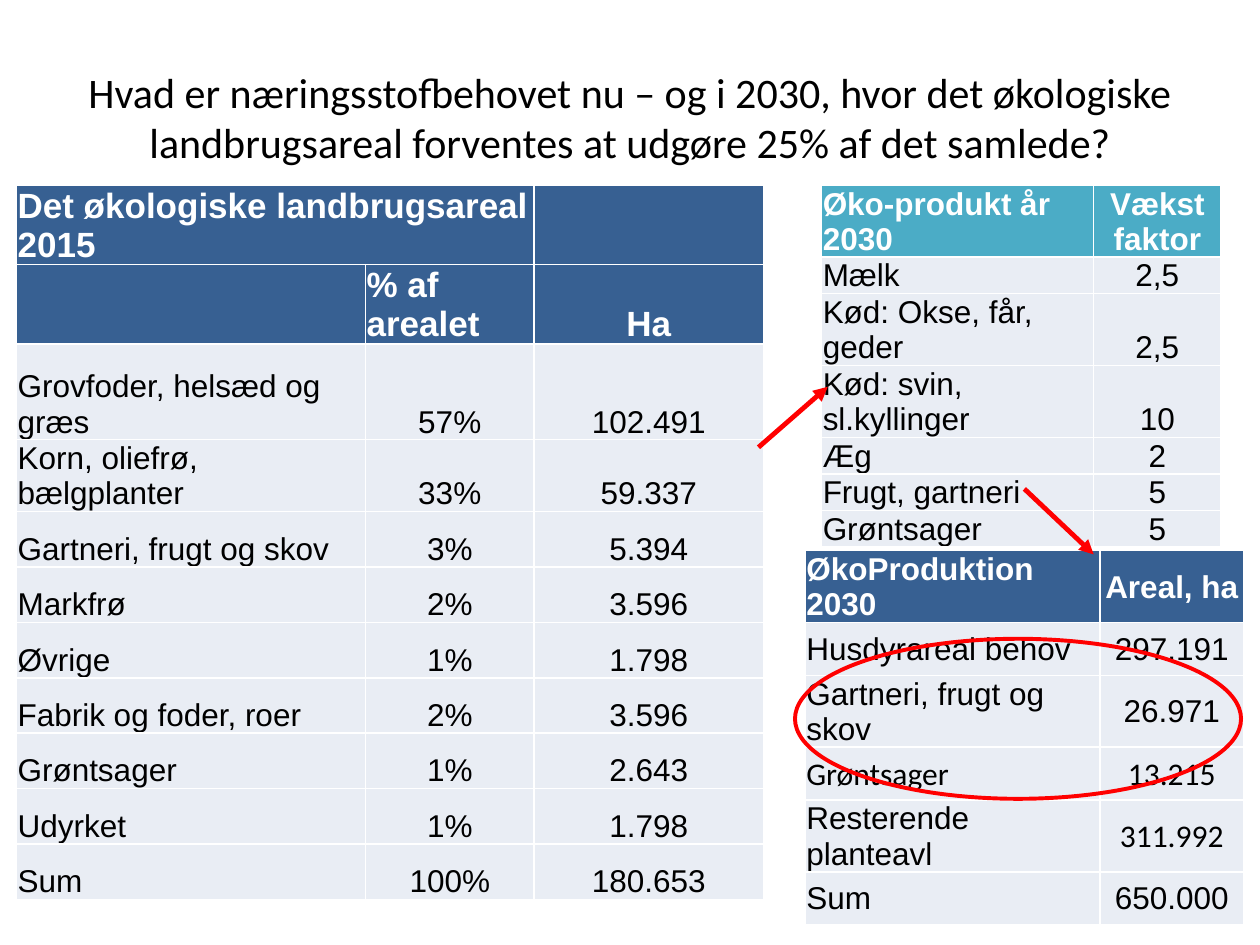
from lxml import etree
from pptx import Presentation
from pptx.dml.color import RGBColor
from pptx.enum import shapes, text
from pptx.oxml import ns
from pptx.util import Inches, Pt

WHITE = RGBColor(0xFF, 0xFF, 0xFF)
BLACK = RGBColor(0, 0, 0)
RED = RGBColor(0xFF, 0, 0)
NAVY = RGBColor(0x37, 0x60, 0x92)
TEAL = RGBColor(0x4B, 0xAC, 0xC6)
PALE = RGBColor(0xE9, 0xED, 0xF4)
LEFT, CENTER = text.PP_ALIGN.LEFT, text.PP_ALIGN.CENTER
BOTTOM, MIDDLE = text.MSO_ANCHOR.BOTTOM, text.MSO_ANCHOR.MIDDLE


def write(frame, wording, size=18, font="Arial", color=BLACK, bold=False, align=LEFT):
    paragraph = frame.paragraphs[0]
    paragraph.alignment = align
    run = paragraph.add_run()
    run.text = wording
    run.font.size = Pt(size)
    run.font.name = font
    run.font.bold = bold
    run.font.color.rgb = color


def add_borders(cell):
    properties = cell._tc.get_or_add_tcPr()
    for side in ("a:lnL", "a:lnR", "a:lnT", "a:lnB"):
        border = etree.SubElement(properties, ns.qn(side), w=str(Pt(1)))
        fill = etree.SubElement(border, ns.qn("a:solidFill"))
        etree.SubElement(fill, ns.qn("a:srgbClr"), val=str(WHITE))


area_2015 = [
    ("Det økologiske landbrugsareal 2015", "", ""),
    ("", "% af arealet", "Ha"),
    ("Grovfoder, helsæd og græs", "57%", "102.491"),
    ("Korn, oliefrø, bælgplanter", "33%", "59.337"),
    ("Gartneri, frugt og skov", "3%", "5.394"),
    ("Markfrø", "2%", "3.596"),
    ("Øvrige", "1%", "1.798"),
    ("Fabrik og foder, roer", "2%", "3.596"),
    ("Grøntsager", "1%", "2.643"),
    ("Udyrket", "1%", "1.798"),
    ("Sum", "100%", "180.653"),
]
growth_2030 = [
    ("Øko-produkt år 2030", "Vækst faktor"),
    ("Mælk", "2,5"),
    ("Kød: Okse, får, geder", "2,5"),
    ("Kød: svin, sl.kyllinger", "10"),
    ("Æg", "2"),
    ("Frugt, gartneri", "5"),
    ("Grøntsager", "5"),
]
production_2030 = [
    ("ØkoProduktion 2030", "Areal, ha"),
    ("Husdyrareal behov", "297.191"),
    ("Gartneri, frugt og skov", "26.971"),
    ("Grøntsager", "13.215"),
    ("Resterende planteavl", "311.992"),
    ("Sum", "650.000"),
]
production_calibri = {"Grøntsager", "13.215", "311.992"}

deck = Presentation()
deck.slide_width, deck.slide_height = Inches(10), Inches(7.5)
slide = deck.slides.add_slide(deck.slide_layouts[5])

title = slide.shapes.title
title.left, title.top = Inches(0.5), Inches(0.3)
title.width, title.height = Inches(9), Inches(1.25)
title.text_frame.vertical_anchor = MIDDLE
write(title.text_frame,
      "Hvad er næringsstofbehovet nu – og i 2030, hvor det økologiske "
      "landbrugsareal forventes at udgøre 25% af det samlede?",
      size=24, font="Calibri", align=CENTER)

tables = [
    (area_2015, 0.13, 1.47, (2.77, 1.34, 1.82), 0.44, NAVY, 2, 20, BOTTOM, ()),
    (growth_2030, 6.52, 1.47, (2.16, 1.01), 0.27, TEAL, 1, 18, BOTTOM, ()),
    (production_2030, 6.39, 4.37, (2.34, 1.14), 0.42, NAVY, 1, 18, MIDDLE, production_calibri),
]
for (rows, left, top, widths, row_height, header_fill, header_rows,
     header_size, anchor, calibri_words) in tables:
    table = slide.shapes.add_table(
        len(rows), len(widths), Inches(left), Inches(top),
        Inches(sum(widths)), Inches(row_height * len(rows))).table
    table.first_row = table.horz_banding = False
    for column, width in zip(table.columns, widths):
        column.width = Inches(width)
    for row_index, row in enumerate(rows):
        table.rows[row_index].height = Inches(row_height)
        is_header = row_index < header_rows
        for column_index, wording in enumerate(row):
            cell = table.cell(row_index, column_index)
            cell.margin_left = cell.margin_right = cell.margin_top = Inches(0.01)
            cell.margin_bottom = 0
            cell.vertical_anchor = anchor
            add_borders(cell)
            cell.fill.solid()
            cell.fill.fore_color.rgb = header_fill if is_header else PALE
            if wording:
                centered = column_index > 0 and wording != "% af arealet"
                write(cell.text_frame, wording,
                      size=header_size if is_header else 18,
                      font="Calibri" if wording in calibri_words else "Arial",
                      color=WHITE if is_header else BLACK,
                      bold=is_header, align=CENTER if centered else LEFT)
    if rows is area_2015:
        table.cell(0, 0).merge(table.cell(0, 1))
        table.rows[2].height = Inches(0.76)

for start_x, start_y, end_x, end_y in [(6.02, 3.55, 6.57, 3.07), (8.13, 3.88, 8.68, 4.4)]:
    arrow = slide.shapes.add_connector(
        shapes.MSO_CONNECTOR.STRAIGHT,
        Inches(start_x), Inches(start_y), Inches(end_x), Inches(end_y))
    arrow.line.color.rgb = RED
    arrow.line.width = Pt(2.75)
    etree.SubElement(arrow.line._get_or_add_ln(), ns.qn("a:tailEnd"), type="triangle")
    etree.SubElement(arrow._element.spPr, ns.qn("a:effectLst"))

highlight = slide.shapes.add_shape(
    shapes.MSO_SHAPE.OVAL, Inches(6.31), Inches(5.07), Inches(3.54), Inches(1.27))
highlight.shadow.inherit = False
highlight.fill.background()
highlight.line.color.rgb = RED
highlight.line.width = Pt(2.25)

deck.save("out.pptx")
